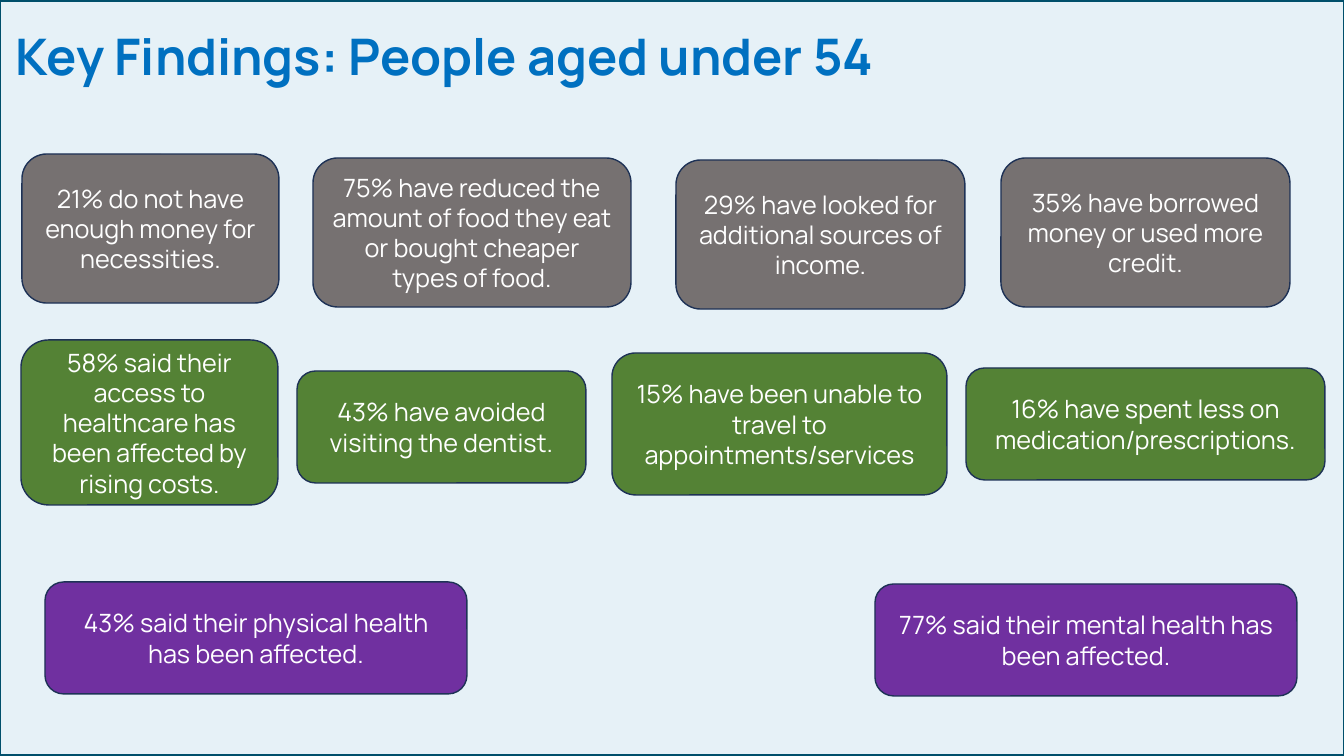
import pptx
import pptx.util
from pptx.dml.color import RGBColor
from pptx.enum.shapes import MSO_SHAPE
from pptx.enum.text import MSO_ANCHOR, MSO_AUTO_SIZE, PP_ALIGN

PAGE_WIDTH, PAGE_HEIGHT = 1344, 756
EMU_PER_PX = 914400 / 100.8
FONT = "Manrope"

PALE_BLUE = RGBColor(0xE6, 0xF1, 0xF7)
TEAL = RGBColor(0x00, 0x4F, 0x6B)
BLUE = RGBColor(0x00, 0x70, 0xC0)
NAVY = RGBColor(0x1E, 0x32, 0x56)
GREY = RGBColor(0x76, 0x71, 0x71)
GREEN = RGBColor(0x54, 0x82, 0x35)
PURPLE = RGBColor(0x70, 0x30, 0xA0)
WHITE = RGBColor(0xFF, 0xFF, 0xFF)

# Each card: offset from its band's left and top, width, height, wording
MONEY_CARDS = [
    (0, 0, 257, 149, "21% do not have enough money for necessities."),
    (291, 4, 318, 149, "75% have reduced the amount of food they eat or bought cheaper types of food."),
    (654, 6, 289, 149, "29% have looked for additional sources of income."),
    (979, 4, 289, 149, "35% have borrowed money or used more credit."),
]
CARE_CARDS = [
    (0, 0, 257, 165, "58% said their access to healthcare has been affected by rising costs."),
    (276, 31, 289, 112, "43% have avoided visiting the dentist."),
    (591, 13, 335, 142, "15% have been unable to travel to appointments/services"),
    (945, 28, 359, 112, "16% have spent less on medication/prescriptions."),
]
HEALTH_CARDS = [
    (0, 0, 422, 112, "43% said their physical health has been affected."),
    (830, 2, 422, 112, "77% said their mental health has been affected."),
]


def px(length):
    return pptx.util.Emu(round(length * EMU_PER_PX))


def add_span(para, wording, size, colour, bold=False):
    span = para.add_run()
    span.text = wording
    span.font.name = FONT
    span.font.size = pptx.util.Pt(size)
    span.font.color.rgb = colour
    span.font.bold = bold


def add_outlined(page, kind, box, line_colour, line_width):
    shape = page.shapes.add_shape(kind, *map(px, box))
    shape.shadow.inherit = False
    shape.line.color.rgb = line_colour
    shape.line.width = pptx.util.Pt(line_width)
    return shape


def add_frame(page, box):
    frame = add_outlined(page, MSO_SHAPE.RECTANGLE, box, TEAL, 3)
    frame.fill.background()


def add_title(page, box, wording):
    title = page.shapes.add_textbox(*map(px, box)).text_frame
    title.word_wrap = True
    title.auto_size = MSO_AUTO_SIZE.SHAPE_TO_FIT_TEXT
    title.margin_left = title.margin_right = px(16)
    title.margin_top = title.margin_bottom = px(12)
    add_span(title.paragraphs[0], wording, 36, BLUE, bold=True)


def add_band(page, left, top, colour, cards):
    for across, down, width, height, wording in cards:
        box = (left + across, top + down, width, height)
        card = add_outlined(page, MSO_SHAPE.ROUNDED_RECTANGLE, box, NAVY, 1)
        card.fill.solid()
        card.fill.fore_color.rgb = colour
        card.text_frame.word_wrap = True
        card.text_frame.vertical_anchor = MSO_ANCHOR.MIDDLE
        para = card.text_frame.paragraphs[0]
        para.alignment = PP_ALIGN.CENTER
        add_span(para, wording, 18, WHITE)


def main():
    deck = pptx.Presentation()
    deck.slide_width, deck.slide_height = px(PAGE_WIDTH), px(PAGE_HEIGHT)
    page = deck.slides.add_slide(deck.slide_layouts[6])
    page.background.fill.solid()
    page.background.fill.fore_color.rgb = PALE_BLUE

    # Border and heading
    add_frame(page, (-1, 0, PAGE_WIDTH + 2, PAGE_HEIGHT))
    add_title(page, (0, 13, 977, 85), "Key Findings: People aged under 54")

    # Findings: money, access to care, health
    add_band(page, 22, 154, GREY, MONEY_CARDS)
    add_band(page, 21, 340, GREEN, CARE_CARDS)
    add_band(page, 45, 582, PURPLE, HEALTH_CARDS)

    deck.save("out.pptx")


if __name__ == "__main__":
    main()
